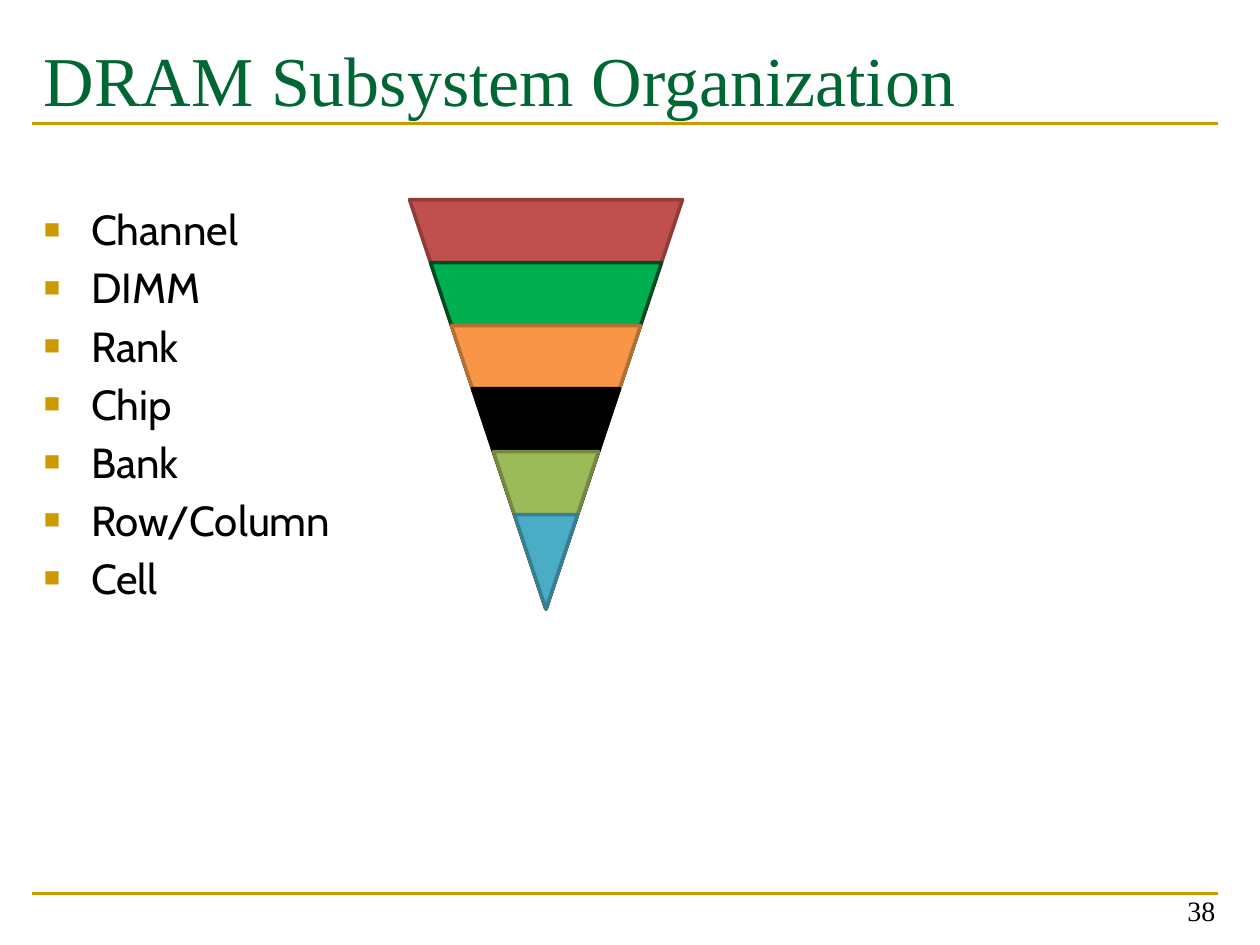
from lxml.etree import SubElement
from pptx import Presentation
from pptx.dml.color import RGBColor
from pptx.enum.shapes import MSO_CONNECTOR, MSO_SHAPE
from pptx.enum.text import MSO_ANCHOR, PP_ALIGN
from pptx.oxml.ns import qn
from pptx.util import Pt

GOLD = RGBColor(0xCC, 0x99, 0x00)
GREEN = RGBColor(0x00, 0x66, 0x33)
BLACK = RGBColor(0x00, 0x00, 0x00)
LAYER_COLORS = [
    (RGBColor(0xC0, 0x50, 0x4D), RGBColor(0x8E, 0x3B, 0x39)),
    (RGBColor(0x00, 0xB0, 0x50), RGBColor(0x00, 0x4C, 0x22)),
    (RGBColor(0xF7, 0x96, 0x46), RGBColor(0xB7, 0x6F, 0x34)),
    (BLACK, BLACK),
    (RGBColor(0x9B, 0xBB, 0x59), RGBColor(0x73, 0x8A, 0x42)),
    (RGBColor(0x4B, 0xAC, 0xC6), RGBColor(0x37, 0x7F, 0x92)),
]
LEVELS = ["Channel", "DIMM", "Rank", "Chip", "Bank", "Row/Column", "Cell"]
SERIF = "Times New Roman"
SANS = "Cabin"


def add_rule(page, top):
    rule = page.shapes.add_connector(
        MSO_CONNECTOR.STRAIGHT, Pt(18), Pt(top), Pt(696), Pt(top))
    rule.line.color.rgb = GOLD
    rule.line.width = Pt(1.5)
    SubElement(rule._element.spPr, qn("a:effectLst"))


def add_text(page, left, top, width, height, lines, size, font, color,
             margin_top=3.6, anchor=MSO_ANCHOR.TOP, align=PP_ALIGN.LEFT):
    box = page.shapes.add_textbox(Pt(left), Pt(top), Pt(width), Pt(height))
    frame = box.text_frame
    frame.word_wrap = True
    frame.margin_top = Pt(margin_top)
    frame.vertical_anchor = anchor
    frame.text = "\n".join(lines)
    for para in frame.paragraphs:
        para.alignment = align
        para.font.size = Pt(size)
        para.font.name = font
        para.font.color.rgb = color
    return box


def add_bullet(para):
    para.space_after = Pt(4.4)
    properties = para._p.get_or_add_pPr()
    properties.set("marL", str(Pt(27)))
    properties.set("indent", str(-Pt(27)))
    color = SubElement(properties, qn("a:buClr"))
    SubElement(color, qn("a:srgbClr"), val=str(GOLD))
    SubElement(properties, qn("a:buSzPct"), val="65000")
    SubElement(properties, qn("a:buFont"), typeface=SERIF)
    SubElement(properties, qn("a:buChar"), char="■")
    properties.append(properties.find(qn("a:defRPr")))


def add_funnel(page, left, top, width, height):
    count = len(LAYER_COLORS)
    for index, (fill, line) in enumerate(LAYER_COLORS):
        inset, drop = 12 * index, 36 * index
        layer = page.shapes.add_shape(
            MSO_SHAPE.FLOWCHART_MERGE, Pt(left + inset), Pt(top + drop),
            Pt(width - 2 * inset), Pt(height - drop))
        layer.shadow.inherit = False
        layer.fill.solid()
        layer.fill.fore_color.rgb = fill
        layer.line.color.rgb = line
        layer.line.width = Pt(2)


def main():
    deck = Presentation()
    deck.slide_width, deck.slide_height = Pt(720), Pt(540)
    page = deck.slides.add_slide(deck.slide_layouts[6])
    add_rule(page, 510.5)
    add_rule(page, 70.75)
    add_text(page, 18, 12, 678, 84, ["DRAM Subsystem Organization"],
             40, SERIF, GREEN, margin_top=9)
    levels = add_text(page, 18, 78.5, 678, 409, LEVELS, 24, SANS, BLACK,
                      margin_top=38)
    for para in levels.text_frame.paragraphs:
        add_bullet(para)
    add_text(page, 533.5, 497.5, 168, 36, ["38"], 16, SERIF, BLACK,
             anchor=MSO_ANCHOR.BOTTOM, align=PP_ALIGN.RIGHT)
    add_funnel(page, 234, 114, 156, 234)
    deck.save("out.pptx")


if __name__ == "__main__":
    main()
